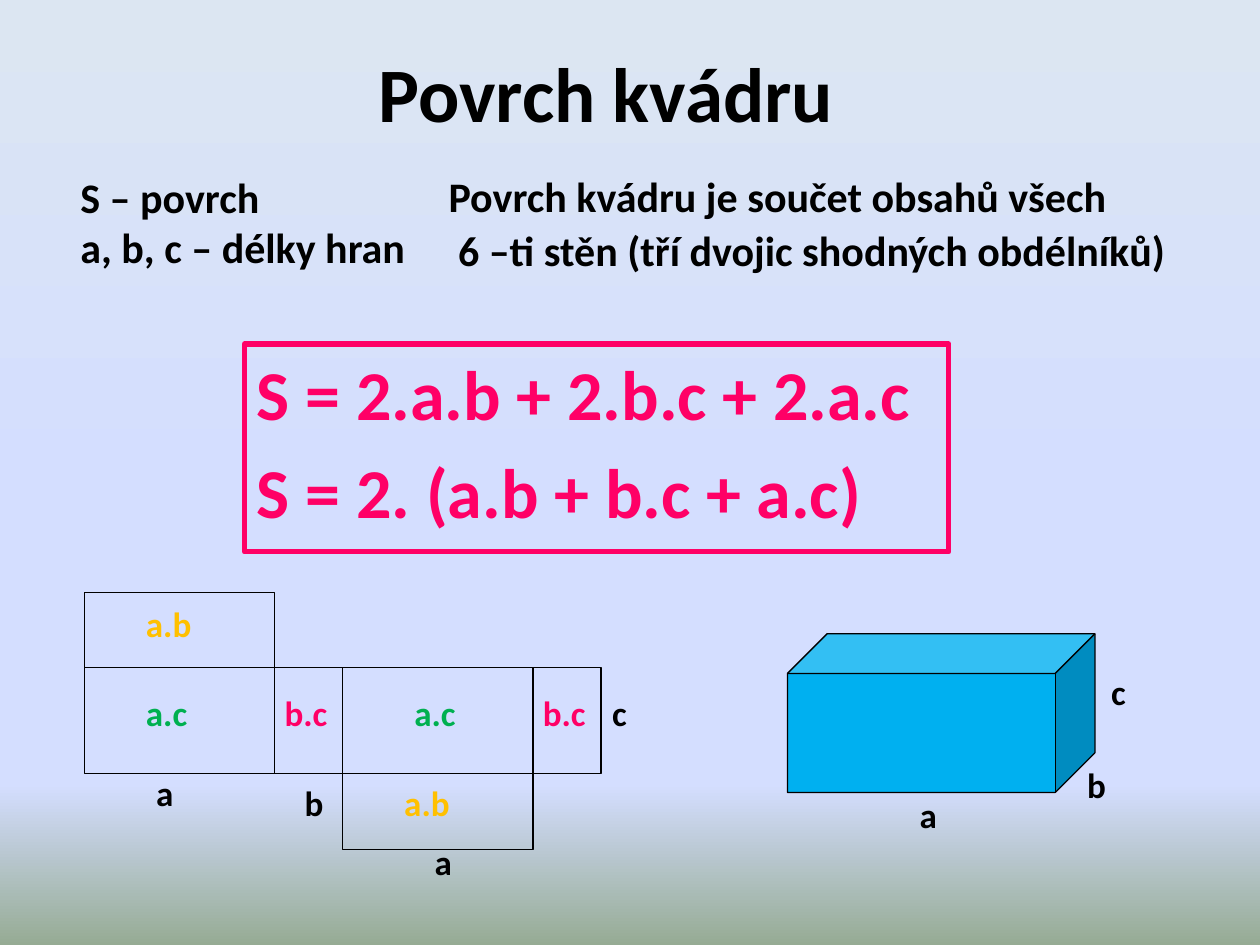
from dataclasses import dataclass

import pptx
import pptx.dml.color
import pptx.enum.shapes
import pptx.enum.text
import pptx.oxml
import pptx.oxml.ns
import pptx.util
from pptx.util import Inches, Pt

RGBColor = pptx.dml.color.RGBColor
MSO_SHAPE = pptx.enum.shapes.MSO_SHAPE
BLACK = RGBColor(0x00, 0x00, 0x00)
PINK = RGBColor(0xFF, 0x00, 0x66)
GREEN = RGBColor(0x00, 0xB0, 0x50)
AMBER = RGBColor(0xFF, 0xC0, 0x00)
BLUE = RGBColor(0x00, 0xB0, 0xF0)
BACKGROUND_STOPS = [
    (0, RGBColor(0xDC, 0xE6, 0xF2)),
    (53, RGBColor(0xD4, 0xDE, 0xFF)),
    (83, RGBColor(0xD4, 0xDE, 0xFF)),
    (100, RGBColor(0x96, 0xAB, 0x94)),
]

# Drawn edge lengths of the unfolded cuboid
EDGE_A, EDGE_B, EDGE_C = 1.51, 0.54, 0.84
FLAP = 0.6
NET_LEFT, NET_TOP = 0.67, 5.3


@dataclass
class Box:
    left: float
    top: float
    width: float
    height: float

    def lengths(self) -> list:
        return [Inches(v) for v in (self.left, self.top, self.width, self.height)]


@dataclass
class Label:
    text: str
    left: float
    top: float
    color: RGBColor = BLACK


SECOND_A = NET_LEFT + EDGE_A + EDGE_B
NET_FACES = [
    Box(NET_LEFT, NET_TOP, EDGE_A, EDGE_C),
    Box(SECOND_A, NET_TOP, EDGE_A, EDGE_C),
    Box(NET_LEFT + EDGE_A, NET_TOP, EDGE_B, EDGE_C),
    Box(SECOND_A + EDGE_A, NET_TOP, EDGE_B, EDGE_C),
    Box(SECOND_A, NET_TOP + EDGE_C, EDGE_A, FLAP),
    Box(NET_LEFT, NET_TOP - FLAP, EDGE_A, FLAP),
]
NET_LABELS = [
    Label("b", 2.32, 6.19),
    Label("a", 1.14, 6.11),
    Label("c", 4.76, 5.48),
    Label("a", 3.35, 6.66),
    Label("a.c", 1.06, 5.48, GREEN),
    Label("a.c", 3.19, 5.48, GREEN),
    Label("a.b", 1.06, 4.77, AMBER),
    Label("a.b", 3.11, 6.19, AMBER),
    Label("b.c", 2.16, 5.48, PINK),
    Label("b.c", 4.21, 5.48, PINK),
]
CUBOID_LABELS = [Label("a", 7.2, 6.29), Label("c", 8.72, 5.31), Label("b", 8.53, 6.05)]


def paint_background(slide) -> None:
    fill = slide.background.fill
    fill.gradient()
    fill.gradient_angle = 270
    stops = fill.gradient_stops[0]._gs.getparent()
    for stop in list(stops):
        stops.remove(stop)
    for percent, color in BACKGROUND_STOPS:
        stops.append(pptx.oxml.parse_xml(
            f'<a:gs {pptx.oxml.ns.nsdecls("a")} pos="{percent * 1000}">'
            f'<a:srgbClr val="{color}"/></a:gs>'))


def write(shape, text: str, size: float, color: RGBColor = BLACK,
          line_spacing: float = 1.0, hanging: bool = True) -> None:
    """Fill the shape with bold text, one paragraph a line, without bullets."""
    frame = shape.text_frame
    frame.text = text
    frame.word_wrap = True
    frame.auto_size = pptx.enum.text.MSO_AUTO_SIZE.NONE
    frame.vertical_anchor = pptx.enum.text.MSO_ANCHOR.TOP
    for paragraph in frame.paragraphs:
        paragraph.alignment = pptx.enum.text.PP_ALIGN.LEFT
        paragraph.line_spacing = line_spacing
        paragraph.space_before = Pt(size * 0.2 if hanging else 0)
        properties = paragraph._p.get_or_add_pPr()
        indent = Inches(0.38) if hanging else 0
        properties.set("marL", str(indent))
        properties.set("indent", str(-indent))
        properties.append(pptx.oxml.parse_xml(
            f'<a:buNone {pptx.oxml.ns.nsdecls("a")}/>'))
        for run in paragraph.runs:
            run.font.name = "Calibri"
            run.font.size = Pt(size)
            run.font.bold = True
            run.font.color.rgb = color


def place(shape, box: Box) -> None:
    shape.left, shape.top, shape.width, shape.height = box.lengths()


def add_outlined(shapes, kind, box: Box, color: RGBColor = BLACK, weight: float = 0.75):
    shape = shapes.add_shape(kind, *box.lengths())
    shape.shadow.inherit = False
    shape.fill.background()
    shape.line.color.rgb = color
    shape.line.width = Pt(weight)
    return shape


def add_label(shapes, label: Label) -> None:
    width = 0.39 if len(label.text) == 1 else 0.71
    box = Box(label.left, label.top, width, 0.47)
    write(shapes.add_textbox(*box.lengths()), label.text, 20, label.color, 0.9)


def main() -> None:
    presentation = pptx.Presentation()
    presentation.slide_width, presentation.slide_height = Inches(10), Inches(7.5)
    slide = presentation.slides.add_slide(presentation.slide_layouts[1])
    paint_background(slide)

    title, body = slide.placeholders
    place(title, Box(0.24, 0.29, 9, 0.87))
    write(title, " Povrch kvádru", 44, hanging=False)
    title.text_frame.vertical_anchor = pptx.enum.text.MSO_ANCHOR.MIDDLE
    title.text_frame.paragraphs[0].alignment = pptx.enum.text.PP_ALIGN.CENTER

    place(body, Box(3.46, 1.35, 6, 0.83))
    write(body, "Povrch kvádru je součet obsahů všech\n"
          " 6 –ti stěn (tří dvojic shodných obdélníků)", 24, line_spacing=0.9)

    formula = add_outlined(slide.shapes, MSO_SHAPE.RECTANGLE,
                           Box(1.94, 2.73, 5.59, 1.65), PINK, 3)
    write(formula, "S = 2.a.b + 2.b.c + 2.a.c\nS = 2. (a.b + b.c + a.c)", 40, PINK)

    cuboid_shapes = slide.shapes.add_group_shape().shapes
    cuboid = add_outlined(cuboid_shapes, MSO_SHAPE.CUBE, Box(6.25, 5.03, 2.44, 1.26))
    cuboid.fill.solid()
    cuboid.fill.fore_color.rgb = BLUE
    for label in CUBOID_LABELS:
        add_label(cuboid_shapes, label)

    net_shapes = slide.shapes.add_group_shape().shapes
    for face in NET_FACES:
        add_outlined(net_shapes, MSO_SHAPE.RECTANGLE, face)
    for label in NET_LABELS:
        add_label(net_shapes, label)

    legend = slide.shapes.add_textbox(*Box(0.54, 1.31, 2.8, 0.91).lengths())
    write(legend, "S – povrch\na, b, c – délky hran", 24, hanging=False)

    presentation.save("out.pptx")


if __name__ == "__main__":
    main()
